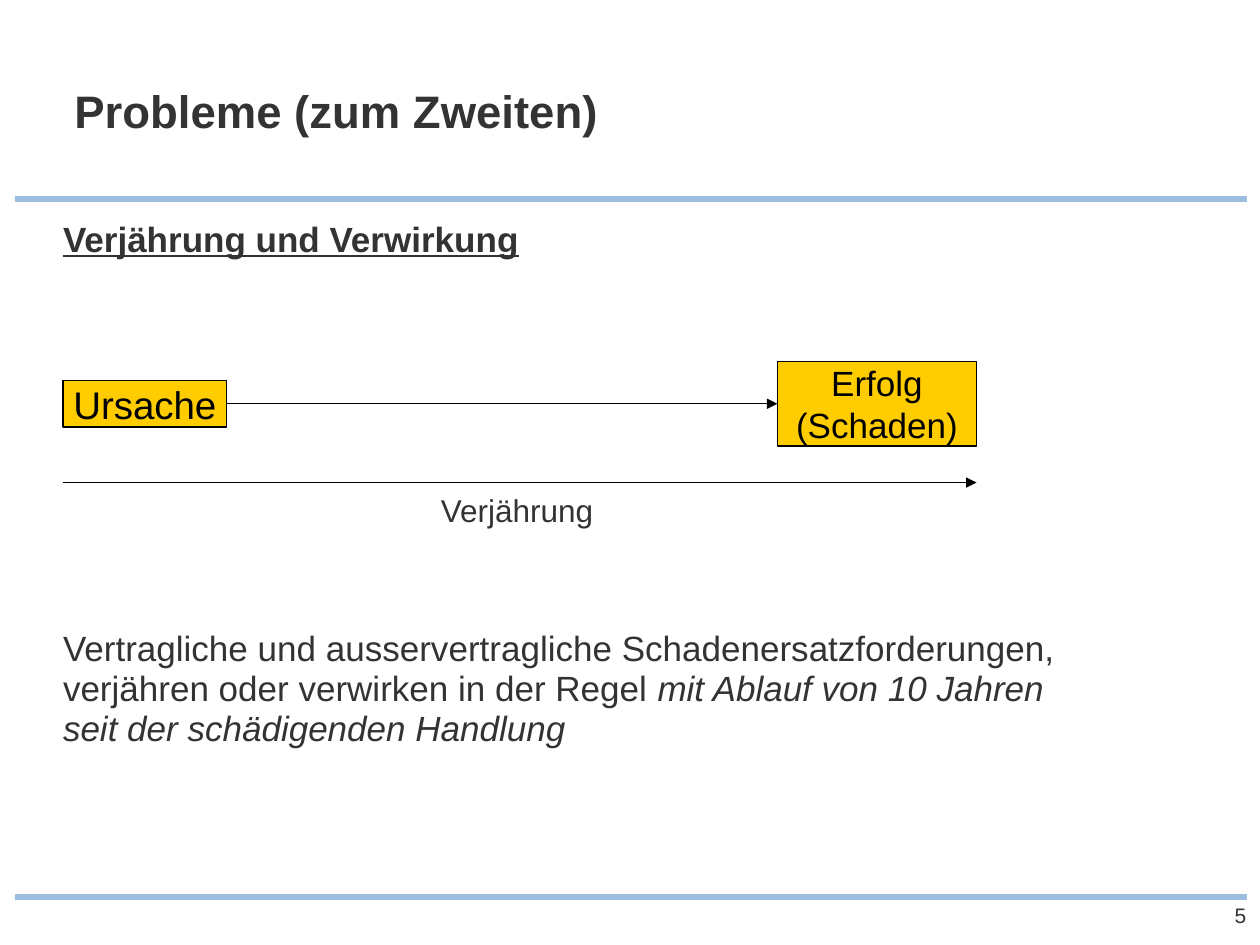
from lxml.etree import SubElement
from pptx import Presentation
from pptx.dml.color import RGBColor
from pptx.enum.shapes import MSO_CONNECTOR, MSO_SHAPE
from pptx.enum.text import MSO_ANCHOR, PP_ALIGN
from pptx.oxml.ns import qn
from pptx.util import Inches, Pt

DARK, BLACK, YELLOW, RULE_BLUE = "333333", "000000", "FFCC00", "9CBDDE"
LEFT, TIMELINE_END = 0.5, 7.75

TITLE = "Probleme (zum Zweiten)"
# text runs (text, italic), box, size, line spacing, alignment, bold and underlined
TEXTS = [
    ([("Verjährung und Verwirkung", False)],
     (LEFT, 1.75, 8.82, 0.35), 20, 0.95, PP_ALIGN.LEFT, True),
    ([("Verjährung", False)],
     (3.5, 3.92, 1.5, 0.3), 18, 0.95, PP_ALIGN.LEFT, False),
    ([("Vertragliche und ausservertragliche Schadenersatzforderungen, "
       "verjähren oder verwirken in der Regel ", False),
      ("mit Ablauf von 10 Jahren seit der schädigenden Handlung", True)],
     (LEFT, 5, 7.92, 1), 20, 0.95, PP_ALIGN.LEFT, False),
    ([("5", False)],
     (9.5, 7.16, 0.39, 0.2), 12, 1, PP_ALIGN.RIGHT, False),
]
# text, box, size
EVENTS = [
    ("Ursache", (LEFT, 3.02, 1.3, 0.37), 22),
    ("Erfolg (Schaden)", (6.17, 2.87, 1.58, 0.67), 20),
]
RULES_Y = [1.58, 7.12]


def color(hex_value):
    return RGBColor.from_string(hex_value)


def inches(values):
    return [Inches(value) for value in values]


def set_frame(frame, anchor):
    frame.word_wrap = True
    frame.vertical_anchor = anchor
    frame.margin_left = frame.margin_right = 0
    frame.margin_top = frame.margin_bottom = 0


def set_font(paragraph, size, hex_value, bold=False):
    font = paragraph.font
    font.name, font.size, font.bold = "Arial", Pt(size), bold
    font.color.rgb = color(hex_value)


def add_line(slide, start, end, hex_value, width, arrow=False):
    line = slide.shapes.add_connector(
        MSO_CONNECTOR.STRAIGHT, *inches(start + end))
    line.line.color.rgb = color(hex_value)
    line.line.width = Pt(width)
    if arrow:
        SubElement(line.line._get_or_add_ln(), qn("a:tailEnd"), type="triangle")
    SubElement(line._element.spPr, qn("a:effectLst"))
    return line


def add_text(slide, runs, box, size, spacing, alignment, heading):
    frame = slide.shapes.add_textbox(*inches(box)).text_frame
    set_frame(frame, MSO_ANCHOR.TOP)
    paragraph = frame.paragraphs[0]
    paragraph.alignment = alignment
    paragraph.line_spacing = spacing
    set_font(paragraph, size, DARK, bold=heading)
    paragraph.font.underline = heading
    for text, italic in runs:
        run = paragraph.add_run()
        run.text = text
        if italic:
            run.font.italic = True


def add_event(slide, text, box, size):
    event = slide.shapes.add_shape(MSO_SHAPE.RECTANGLE, *inches(box))
    event.shadow.inherit = False
    event.fill.solid()
    event.fill.fore_color.rgb = color(YELLOW)
    event.line.color.rgb = color(BLACK)
    event.line.width = Pt(0.75)
    set_frame(event.text_frame, MSO_ANCHOR.MIDDLE)
    paragraph = event.text_frame.paragraphs[0]
    paragraph.text = text
    paragraph.alignment = PP_ALIGN.CENTER
    set_font(paragraph, size, BLACK)
    return event


def main():
    prs = Presentation()
    prs.slide_width, prs.slide_height = Inches(10), Inches(7.5)
    slide = prs.slides.add_slide(prs.slide_layouts[5])

    # Rules above and below the content
    for y in RULES_Y:
        add_line(slide, (0.12, y), (9.9, y), RULE_BLUE, 3)

    # Title
    title = slide.shapes.title
    title.left, title.top, title.width, title.height = inches(
        (0.59, 0.71, 7.24, 0.89))
    set_frame(title.text_frame, MSO_ANCHOR.TOP)
    heading = title.text_frame.paragraphs[0]
    heading.text = TITLE
    heading.alignment = PP_ALIGN.LEFT
    heading.line_spacing = 0.9
    set_font(heading, 26, DARK, bold=True)

    # Subheading, timeline label, explanation and page number
    for text in TEXTS:
        add_text(slide, *text)

    # Cause leading to the damage, with the limitation period below
    cause, damage = [add_event(slide, *event) for event in EVENTS]
    effect = add_line(slide, (1.8, 3.2), (6.17, 3.2), BLACK, 0.75, arrow=True)
    effect.begin_connect(cause, 3)
    effect.end_connect(damage, 1)
    add_line(slide, (LEFT, 3.83), (TIMELINE_END, 3.83), BLACK, 0.75, arrow=True)

    prs.save("out.pptx")


if __name__ == "__main__":
    main()
